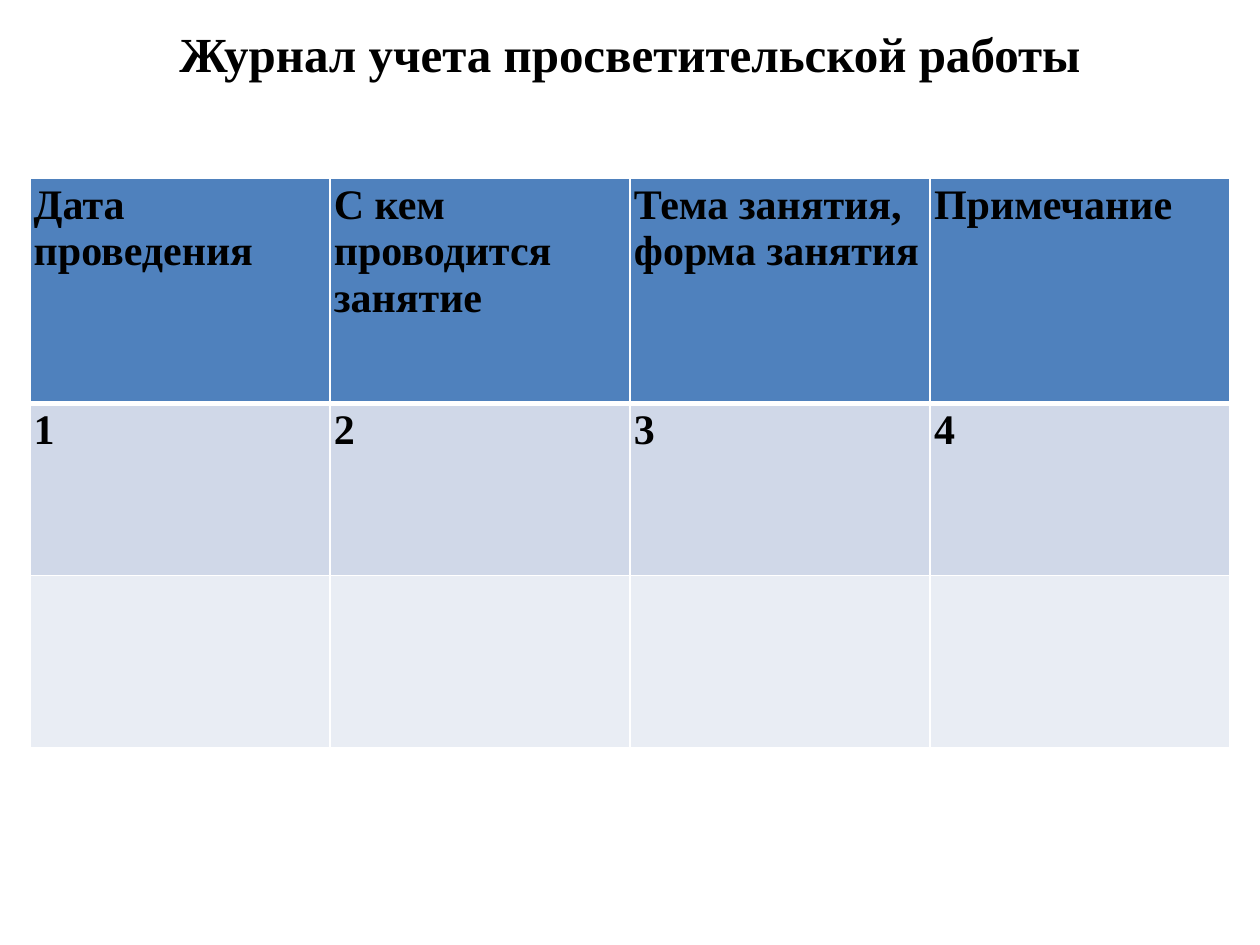
import pptx
import pptx.dml.color
import pptx.enum.text
import pptx.oxml
import pptx.oxml.ns
import pptx.util
from pptx.util import Cm

TITLE = "Журнал учета просветительской работы"
ROWS = [
    ("Дата проведения", "С кем проводится занятие", "Тема занятия, форма занятия", "Примечание"),
    ("1", "2", "3", "4"),
    ("", "", "", ""),
]
ROW_FILLS = ["4F81BD", "D0D8E8", "E9EDF4"]
ROW_HEIGHTS = [4.54, 3.47, 3.47]
COLUMN_WIDTH = 6.05
TABLE_LEFT, TABLE_TOP = 0.6, 3.59
CELL_MARGIN = 0.08
FONT = "Times New Roman"


def color(value):
    return pptx.dml.color.RGBColor.from_string(value)


def style_text(para, size):
    para.font.name = FONT
    para.font.size = pptx.util.Pt(size)
    para.font.bold = True
    para.font.color.rgb = color("000000")


def set_borders(cell, widths):
    """Draw white cell borders; widths maps the sides L, R, T, B to points."""
    properties = cell._tc.get_or_add_tcPr()
    for index, (side, width) in enumerate(widths.items()):
        line = pptx.oxml.parse_xml(
            f'<a:ln{side} {pptx.oxml.ns.nsdecls("a")} w="{pptx.util.Pt(width)}">'
            '<a:solidFill><a:srgbClr val="FFFFFF"/></a:solidFill>'
            f'</a:ln{side}>'
        )
        properties.insert(index, line)


def add_title(page):
    box = page.shapes.add_textbox(Cm(1.27), Cm(0), Cm(22.86), Cm(1.78))
    frame = box.text_frame
    frame.word_wrap = True
    frame.vertical_anchor = pptx.enum.text.MSO_ANCHOR.MIDDLE
    frame.margin_top, frame.margin_bottom = Cm(0.43), Cm(0.07)
    para = frame.paragraphs[0]
    para.text = TITLE
    para.alignment = pptx.enum.text.PP_ALIGN.CENTER
    style_text(para, 28)


def add_journal(page):
    columns = len(ROWS[0])
    table = page.shapes.add_table(
        len(ROWS), columns, Cm(TABLE_LEFT), Cm(TABLE_TOP),
        Cm(COLUMN_WIDTH * columns), Cm(sum(ROW_HEIGHTS)),
    ).table
    for column in table.columns:
        column.width = Cm(COLUMN_WIDTH)
    for index, (texts, fill, height) in enumerate(zip(ROWS, ROW_FILLS, ROW_HEIGHTS)):
        table.rows[index].height = Cm(height)
        borders = {"L": 1, "R": 1, "T": 3 if index == 1 else 1, "B": 3 if index == 0 else 1}
        for cell, text in zip(table.rows[index].cells, texts):
            cell.text = text
            cell.margin_left = cell.margin_right = Cm(CELL_MARGIN)
            cell.margin_top = cell.margin_bottom = Cm(CELL_MARGIN)
            cell.fill.solid()
            cell.fill.fore_color.rgb = color(fill)
            set_borders(cell, borders)
            style_text(cell.text_frame.paragraphs[0], 24)


def main():
    deck = pptx.Presentation()
    deck.slide_width, deck.slide_height = Cm(25.4), Cm(19.05)
    page = deck.slides.add_slide(deck.slide_layouts[6])
    add_title(page)
    add_journal(page)
    deck.save("out.pptx")


if __name__ == "__main__":
    main()
